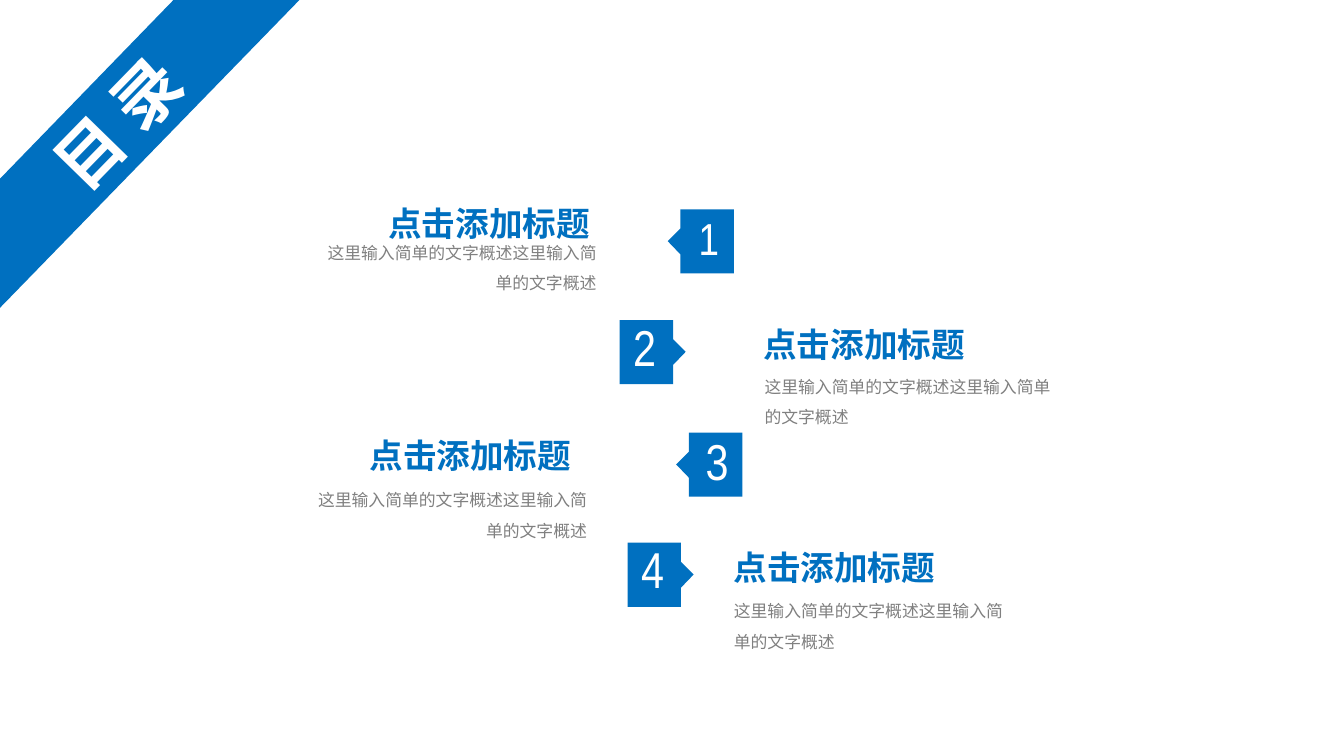
import pptx
import pptx.util
import pptx.dml.color
import pptx.enum.text
import pptx.oxml.ns
import lxml.etree

Cm = pptx.util.Cm
Pt = pptx.util.Pt
ALIGN = pptx.enum.text.PP_ALIGN
MIDDLE = pptx.enum.text.MSO_ANCHOR.MIDDLE
COLORS = {"blue": "0070C0", "grey": "808080", "white": "FFFFFF"}
CJK = "Noto Sans CJK SC"


def write(box, text, font, size, color, align, insets, bold=False, spacing=None):
    frame = box.text_frame
    frame.word_wrap = True
    frame.margin_left, frame.margin_top, frame.margin_right, frame.margin_bottom = map(Cm, insets)
    frame.text = text
    para = frame.paragraphs[0]
    para.alignment = align
    para.line_spacing = spacing
    para.font.name = font
    para.font.size = Pt(size)
    para.font.bold = bold
    para.font.color.rgb = pptx.dml.color.RGBColor.from_string(COLORS[color])
    latin = para.font._element.find(pptx.oxml.ns.qn("a:latin"))
    east_asian = lxml.etree.Element(pptx.oxml.ns.qn("a:ea"), typeface=font)
    latin.addnext(east_asian)
    return para


def draw_outline(page, points):
    points = [(Cm(x), Cm(y)) for x, y in points]
    builder = page.shapes.build_freeform(*points[0])
    builder.add_line_segments(points[1:], close=True)
    shape = builder.convert_to_shape()
    shape.shadow.inherit = False
    shape.fill.solid()
    shape.fill.fore_color.rgb = pptx.dml.color.RGBColor.from_string(COLORS["blue"])
    shape.line.fill.background()
    return shape


deck = pptx.Presentation()
deck.slide_width, deck.slide_height = Cm(25.4), Cm(14.29)
page = deck.slides.add_slide(deck.slide_layouts[5])

band = draw_outline(page, [(3.28, 0), (0, 3.38), (0, 5.82), (5.66, 0)])
title = page.shapes.title
band._element.addnext(title._element)
title.left, title.top, title.width, title.height = Cm(-1.85), Cm(1.45), Cm(8.13), Cm(1.7)
title.rotation = 314.3
title.text_frame.vertical_anchor = MIDDLE
heading = write(title, "目 录", CJK, 36, "white", ALIGN.CENTER, (0, 0, 0, 0), bold=True)
heading.space_before = Pt(5.7)

TAG_WIDTH, TAG_BODY, TAG_HEIGHT = 1.25, 1.01, 1.21
TAG_OUTLINE = [(0, 0), (TAG_BODY, 0), (TAG_BODY, 0.36), (TAG_WIDTH, 0.6),
               (TAG_BODY, 0.85), (TAG_BODY, TAG_HEIGHT), (0, TAG_HEIGHT)]
TEXT_INSETS = (0.18, 0.1, 0.18, 0.1)
HEADLINE, SUMMARY = "点击添加标题", "这里输入简单的文字概述这里输入简单的文字概述"

entries = [
    ("1", 24, (12.62, 3.96), (6.91, 3.35, 4.67), (5.99, 4.29, 5.46)),
    ("2", 27, (11.71, 6.05), (13.46, 5.64, 5.74), (14.27, 6.83, 5.92)),
    ("3", 27, (12.78, 8.18), (6.5, 7.75, 4.78), (5.66, 8.97, 5.61)),
    ("4", 27, (11.86, 10.26), (13.46, 9.86, 4.62), (13.69, 11.07, 5.51)),
]
for index, (number, size, (left, top), headline_place, summary_place) in enumerate(entries):
    points_left = index % 2 == 0
    tag = draw_outline(page, [(left + (TAG_WIDTH - x if points_left else x), top + y)
                              for x, y in TAG_OUTLINE])
    tag.text_frame.vertical_anchor = MIDDLE
    tag_insets = (0.3, 0, 0, 0.15) if points_left else (0, 0, 0.3, 0.23)
    write(tag, number, "Arial Narrow", size, "white", ALIGN.CENTER, tag_insets)

    summary_align = ALIGN.RIGHT if points_left else ALIGN.LEFT
    for place, height, text, font, points, color, align, bold in [
        (summary_place, 1.27, SUMMARY, CJK, 9, "grey", summary_align, False),
        (headline_place, 1.35, HEADLINE, "Karla", 18, "blue", ALIGN.CENTER, True),
    ]:
        x, y, width = place
        box = page.shapes.add_textbox(Cm(x), Cm(y), Cm(width), Cm(height))
        write(box, text, font, points, color, align, TEXT_INSETS, bold, spacing=1.5)

deck.save("out.pptx")
